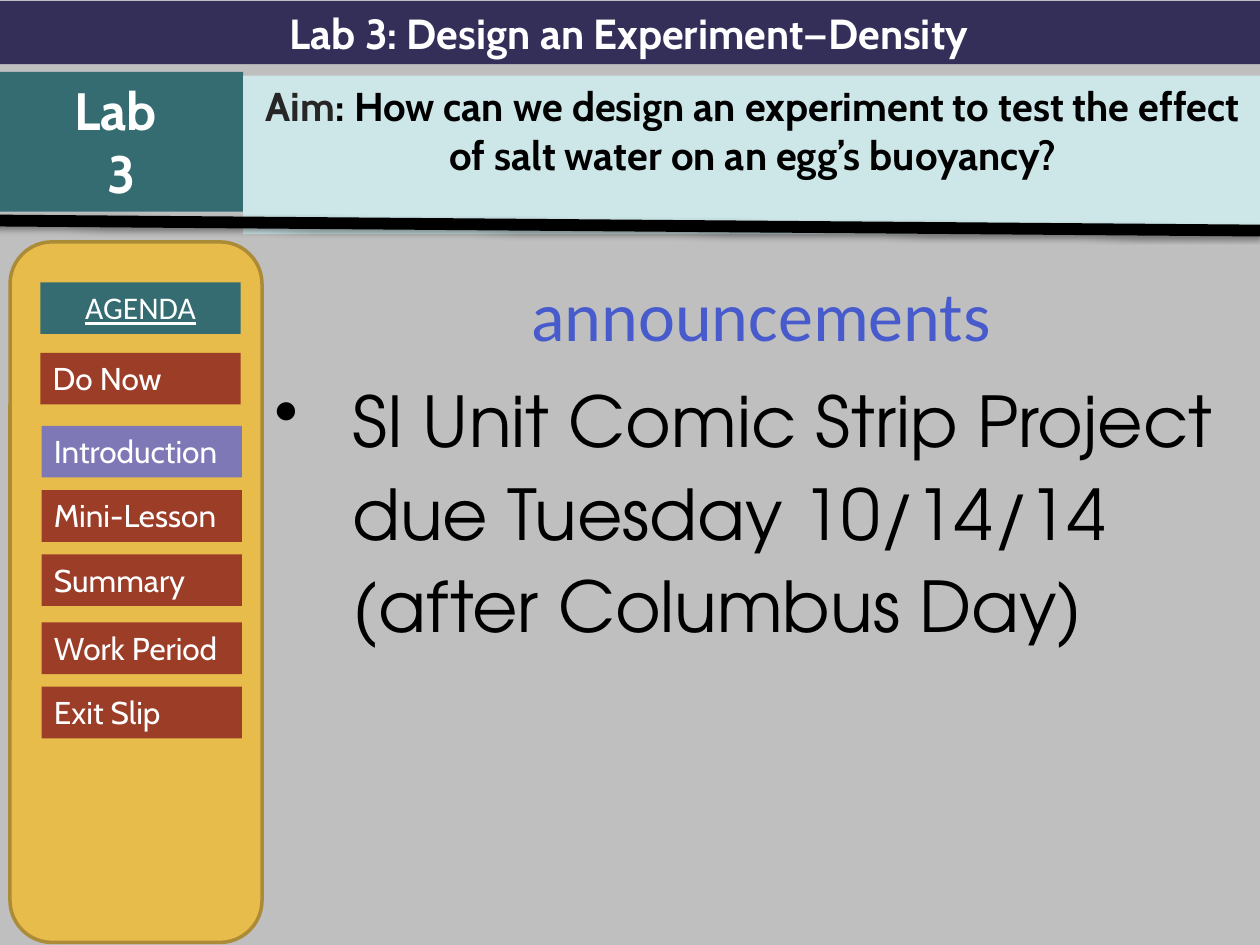
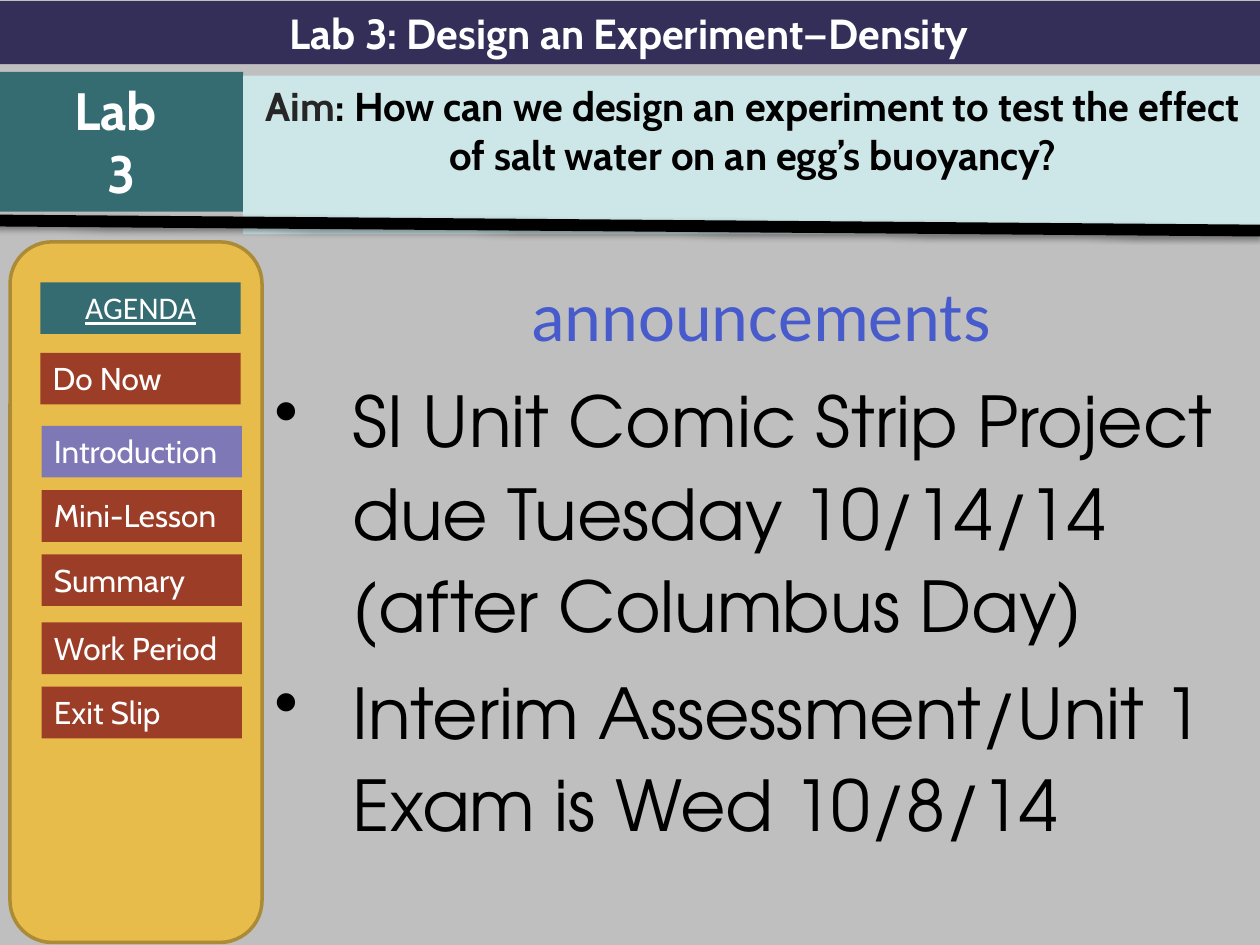
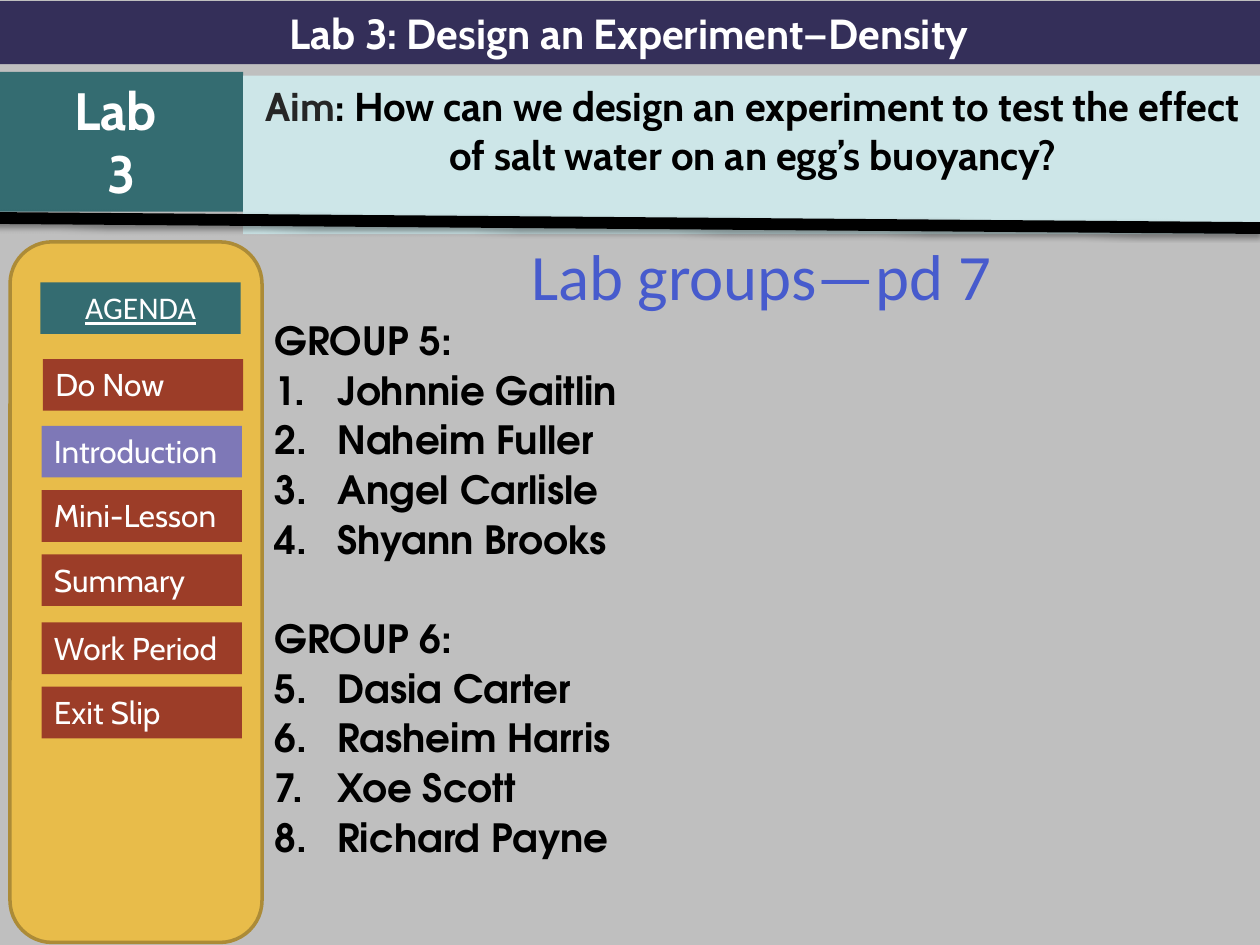
from lxml.etree import SubElement
from pptx import Presentation
from pptx.dml.color import RGBColor
from pptx.enum.shapes import MSO_CONNECTOR, MSO_SHAPE
from pptx.enum.text import MSO_ANCHOR, PP_ALIGN
from pptx.oxml.ns import qn
from pptx.util import Inches, Pt

GRAY, INDIGO, TEAL, ICE = "BFBFBF", "342F59", "346C71", "CDE6E8"
GOLD, BRONZE, RUST, LILAC = "E8BC4A", "AC8B37", "9C3D28", "7E78B7"
BLUE, BLACK, CHARCOAL, WHITE = "475BCD", "000000", "262626", "FFFFFF"
HEAD_FONT, PLAIN_FONT, BODY_FONT = "Cabin", "Calibri", "TeX Gyre Adventor"

AGENDA_TOPS = {"Introduction": 1.46, "Mini-Lesson": 1.97, "Summary": 2.48,
               "Work Period": 3.02, "Exit Slip": 3.53}
CURRENT_STEP = "Introduction"
COMIC_STRIP = "SI Unit Comic Strip Project due Tuesday 10/14/14 (after Columbus Day)"
EXAM = "Interim Assessment/Unit 1 Exam is Wed 10/8/14"
GROUPS = {
    "GROUP 5:": ["Johnnie Gaitlin", "Naheim Fuller", "Angel Carlisle", "Shyann Brooks"],
    "GROUP 6:": ["Dasia Carter", "Rasheim Harris", "Xoe Scott", "Richard Payne"],
}


def rgb(value):
    """Turn a hex string into a colour."""
    return RGBColor.from_string(value)


def style(run, size, font, color, bold=False, underline=False):
    """Format one run."""
    run.font.size, run.font.name = Pt(size), font
    run.font.bold, run.font.underline = bold, underline
    run.font.color.rgb = rgb(color)


def add_block(shapes, box, fill, text="", align=PP_ALIGN.CENTER,
              kind=MSO_SHAPE.RECTANGLE, **look):
    """Add a flat filled block with top-anchored text."""
    block = shapes.add_shape(kind, *map(Inches, box))
    block.shadow.inherit = False
    block.fill.solid()
    block.fill.fore_color.rgb = rgb(fill)
    block.line.fill.background()
    frame = block.text_frame
    frame.word_wrap, frame.vertical_anchor = True, MSO_ANCHOR.TOP
    frame.text = text
    for paragraph in frame.paragraphs:
        paragraph.alignment = align
        for run in paragraph.runs:
            style(run, **look)
    return block


def add_divider(slide, top):
    """Draw the heavy slanted rule with its soft shadow."""
    divider = slide.shapes.add_connector(
        MSO_CONNECTOR.STRAIGHT, Inches(-0.05), Inches(top), Inches(10), Inches(top + 0.08))
    divider.line.color.rgb = rgb(BLACK)
    divider.line.width = Pt(6.75)
    effects = SubElement(divider._element.spPr, qn("a:effectLst"))
    shadow = SubElement(effects, qn("a:outerShdw"), blurRad=str(Pt(3.1)),
                        dist=str(Pt(1.6)), dir="5400000", rotWithShape="0")
    tint = SubElement(shadow, qn("a:srgbClr"), val=BLACK)
    SubElement(tint, qn("a:alpha"), val="38000")


def add_header(slide, divider_top):
    """Add the lesson title, lab number, aim and divider."""
    heading = dict(font=HEAD_FONT, color=WHITE, bold=True)
    add_block(slide.shapes, (0, 0.01, 10.06, 0.5), INDIGO,
              "Lab 3: Design an Experiment—Density ", size=24, **heading)
    add_block(slide.shapes, (0, 0.57, 1.93, 1.11), TEAL, "Lab \n3", size=30, **heading)
    aim = add_block(slide.shapes, (1.93, 0.6, 8.1, 1.26), ICE, "Aim",
                    size=23, font=HEAD_FONT, color=CHARCOAL, bold=True)
    question = aim.text_frame.paragraphs[0].add_run()
    question.text = (": How can we design an experiment to test the effect "
                     "of salt water on an egg’s buoyancy?")
    style(question, 23, HEAD_FONT, BLACK, bold=True)
    add_divider(slide, divider_top)


def add_agenda(slide, box, do_now_offset):
    """Add the agenda panel with its steps placed inside the box."""
    left, top, _, _ = box
    panel = slide.shapes.add_group_shape().shapes
    backing = add_block(panel, box, GOLD, kind=MSO_SHAPE.ROUNDED_RECTANGLE)
    backing.line.color.rgb = rgb(BRONZE)
    backing.line.width = Pt(2)

    def add_step(shapes, x, y, fill, text, align=PP_ALIGN.LEFT, font=HEAD_FONT, **look):
        """Add one agenda step at an offset from the panel corner."""
        add_block(shapes, (left + x, top + y, 1.59, 0.41), fill, text, align,
                  size=18, font=font, color=WHITE, **look)

    add_step(panel, 0.24, 0.32, TEAL, "AGENDA", PP_ALIGN.CENTER, PLAIN_FONT, underline=True)
    for step, y in AGENDA_TOPS.items():
        add_step(panel, 0.25, y, LILAC if step == CURRENT_STEP else RUST, step)
    add_step(slide.shapes, *do_now_offset, RUST, "Do Now")


def add_body(slide, box, title, title_size, spacing):
    """Add the content area with its title and return its text frame."""
    frame = slide.shapes.add_textbox(*map(Inches, box)).text_frame
    frame.word_wrap = True
    add_line(frame.paragraphs[0], title, spacing, title_size, PLAIN_FONT, BLUE)
    frame.paragraphs[0].alignment = PP_ALIGN.CENTER
    return frame


def add_line(paragraph, text, spacing, size, font=BODY_FONT, color=BLACK, bold=False):
    """Fill one body paragraph, spaced by a fifth of its size."""
    paragraph.text = text
    paragraph.line_spacing = spacing
    paragraph.space_before = Pt(round(size * 0.2, 1))
    style(paragraph.runs[0], size, font, color, bold)


def add_marker(paragraph, indent, tag, **attributes):
    """Give a paragraph a hanging bullet or number."""
    properties = paragraph._p.get_or_add_pPr()
    properties.set("marL", str(Inches(indent)))
    properties.set("indent", str(-Inches(indent)))
    SubElement(properties, qn(tag), **attributes)


def start_slide(deck, divider_top):
    """Add a blank slide with the shared background."""
    slide = deck.slides.add_slide(deck.slide_layouts[6])
    slide.background.fill.solid()
    slide.background.fill.fore_color.rgb = rgb(GRAY)
    return slide


def finish_slide(slide, divider_top, do_now_offset):
    """Lay the shared header and agenda over the content."""
    add_header(slide, divider_top)
    add_agenda(slide, (0.08, 1.92, 2, 5.56), do_now_offset)


def announcements_slide(deck, notices):
    """Build a slide of bulleted announcements."""
    slide = start_slide(deck, 1.75)
    frame = add_body(slide, (2.08, 2.04, 7.92, 5.46), "announcements", 40, 1.1)
    for notice in notices:
        paragraph = frame.add_paragraph()
        add_line(paragraph, notice, 1.1, 40)
        add_marker(paragraph, 0.62, "a:buChar", char="•")
    finish_slide(slide, 1.75, (0.24, 0.88))


def groups_slide(deck, groups):
    """Build the slide of numbered lab groups."""
    slide = start_slide(deck, 1.73)
    frame = add_body(slide, (2.08, 1.89, 7.92, 5.46), "Lab groups—pd 7", 37, 0.9)
    number = 1
    for group, members in groups.items():
        heading = frame.add_paragraph()
        add_line(heading, group, 0.9, 22.2, bold=True)
        if number > 1:
            heading.space_before = Pt(32.8)
        first = number
        for member in members:
            paragraph = frame.add_paragraph()
            add_line(paragraph, member, 0.9, 22.2, bold=True)
            add_marker(paragraph, 0.5, "a:buAutoNum", type="arabicPeriod", startAt=str(first))
            number += 1
    finish_slide(slide, 1.73, (0.26, 0.93))


def main():
    """Build and save the deck."""
    deck = Presentation()
    deck.slide_width, deck.slide_height = Inches(10), Inches(7.5)
    announcements_slide(deck, [COMIC_STRIP])
    announcements_slide(deck, [COMIC_STRIP, EXAM])
    groups_slide(deck, GROUPS)
    deck.save("out.pptx")


if __name__ == "__main__":
    main()
